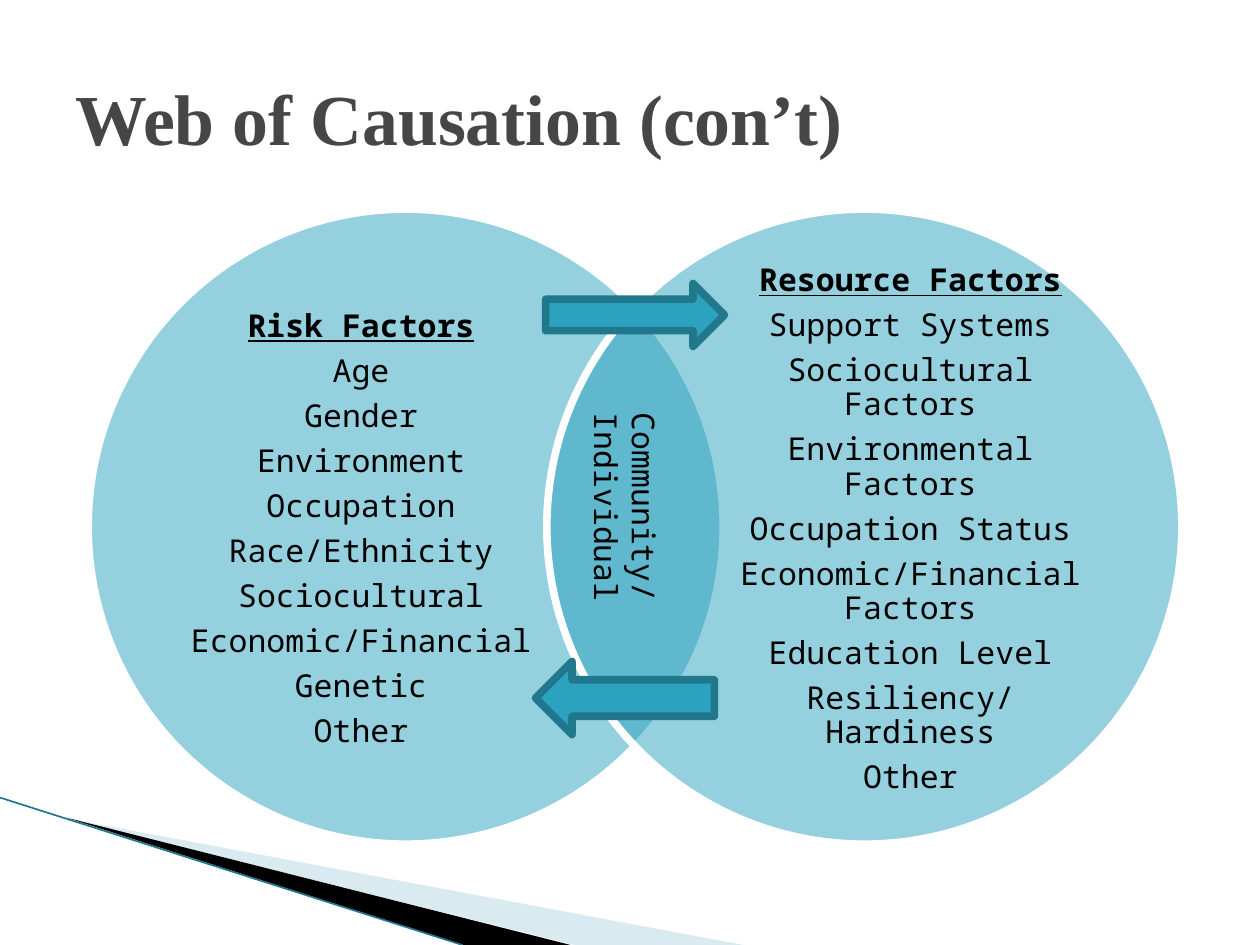
from lxml import etree
from pptx import Presentation
from pptx.dml.color import RGBColor
from pptx.enum.shapes import MSO_CONNECTOR, MSO_SHAPE
from pptx.enum.text import MSO_ANCHOR, PP_ALIGN
from pptx.oxml.ns import qn
from pptx.util import Inches, Pt

CENTER, LEFT = PP_ALIGN.CENTER, PP_ALIGN.LEFT
MIDDLE, TOP = MSO_ANCHOR.MIDDLE, MSO_ANCHOR.TOP
OVAL = MSO_SHAPE.OVAL
RIGHT_ARROW, LEFT_ARROW = MSO_SHAPE.RIGHT_ARROW, MSO_SHAPE.LEFT_ARROW
STRAIGHT = MSO_CONNECTOR.STRAIGHT

COLORS = {"teal": "2DA2BF", "edge": "21788D", "pale": "A0CBDC",
          "black": "000000", "white": "FFFFFF", "title": "464646"}
MONO, SERIF = "Noto Sans Mono", "Times New Roman"

TITLE = "Web of Causation (con’t)"
OVERLAP = ["Community/", "Individual"]
CIRCLES = [
    {"left": 0.7, "text_left": 1.41, "lines": [
        "Risk Factors", "Age", "Gender", "Environment", "Occupation",
        "Race/Ethnicity", "Sociocultural", "Economic/Financial", "Genetic", "Other"]},
    {"left": 4.34, "text_left": 5.77, "lines": [
        "Resource Factors", "Support Systems", "Sociocultural Factors",
        "Environmental Factors", "Occupation Status", "Economic/Financial Factors",
        "Education Level", "Resiliency/Hardiness", "Other"]},
]
ARROWS = [(RIGHT_ARROW, (4.33, 2.25, 1.42, 0.5)),
          (LEFT_ARROW, (4.25, 5.25, 1.42, 0.58))]
WEDGES = [("pale", 40, [(0.55, 6.5), (5.9, 7.5), (4.56, 7.5)]),
          ("black", 100, [(0.53, 6.49), (4.53, 7.5), (3.68, 7.5)])]


def rgb(name):
    return RGBColor.from_string(COLORS[name])


def paint(s, fill, line=None, alpha=100):
    s.shadow.inherit = False
    s.fill.solid()
    s.fill.fore_color.rgb = rgb(fill)
    if alpha < 100:
        color = s.fill._xPr.find(qn("a:solidFill"))[0]
        etree.SubElement(color, qn("a:alpha")).set("val", str(alpha * 1000))
    if line:
        s.line.color.rgb = rgb(line)
        s.line.width = Pt(4.33)
    else:
        s.line.fill.background()


def add_text(slide, lines, box, font=MONO, size=18, color="black", bold=False, heading=False,
             align=CENTER, anchor=TOP, spacing=1, after=0, inset=(0.1, 0.05), rotation=0):
    s = slide.shapes.add_textbox(*map(Inches, box))
    s.rotation = rotation
    tf = s.text_frame
    tf.word_wrap = True
    tf.vertical_anchor = anchor
    tf.margin_left = tf.margin_right = Inches(inset[0])
    tf.margin_top = tf.margin_bottom = Inches(inset[1])
    for i, line in enumerate(lines):
        p = tf.paragraphs[0] if i == 0 else tf.add_paragraph()
        p.alignment = align
        p.line_spacing = spacing
        p.space_after = Pt(after if i < len(lines) - 1 else 0)
        r = p.add_run()
        r.text = line
        is_heading = heading and i == 0
        r.font.name, r.font.size = font, Pt(size)
        r.font.bold = bold or is_heading
        r.font.underline = is_heading
        r.font.color.rgb = rgb(color)


def add_corner(slide):
    for color, alpha, points in WEDGES:
        start, *rest = [(Inches(x), Inches(y)) for x, y in points]
        builder = slide.shapes.build_freeform(*start)
        builder.add_line_segments(rest)
        paint(builder.convert_to_shape(), color, alpha=alpha)
    line = slide.shapes.add_connector(STRAIGHT, *map(Inches, (0, 6.33, 3.67, 7.5)))
    line.line.color.rgb = rgb("edge")
    line.line.width = Pt(0.95)
    etree.SubElement(line._element.spPr, qn("a:effectLst"))


def main():
    prs = Presentation()
    prs.slide_width, prs.slide_height = Inches(10), Inches(7.5)
    slide = prs.slides.add_slide(prs.slide_layouts[6])
    add_corner(slide)
    for circle in CIRCLES:
        s = slide.shapes.add_shape(OVAL, *map(Inches, (circle["left"], 1.66, 5.04, 5.04)))
        paint(s, "teal", "white", alpha=50)
        add_text(slide, circle["lines"], (circle["text_left"], 2.28, 2.91, 3.85),
                 heading=True, anchor=MIDDLE, spacing=0.9, after=6.3, inset=(0, 0))
    add_text(slide, [TITLE], (0.5, 0.3, 9, 1.25), font=SERIF, size=41, color="title",
             bold=True, align=LEFT, anchor=MIDDLE)
    for kind, box in ARROWS:
        paint(slide.shapes.add_shape(kind, *map(Inches, box)), "teal", "edge")
    add_text(slide, OVERLAP, (4, 3.67, 1.92, 0.71), rotation=90)
    prs.save("out.pptx")


if __name__ == "__main__":
    main()
